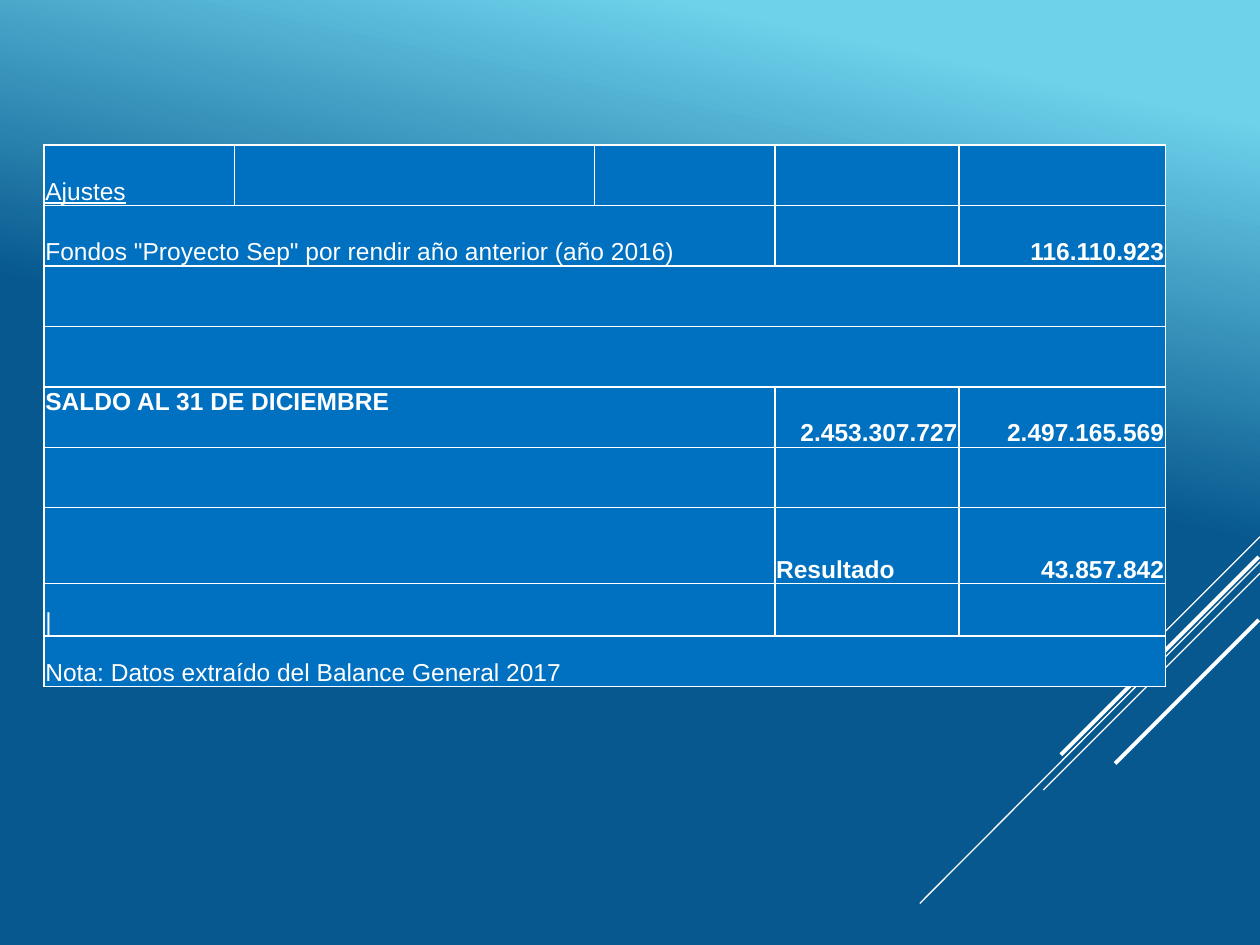
from lxml import etree
from pptx import Presentation
from pptx.dml.color import RGBColor
from pptx.enum import shapes, text
from pptx.oxml import parse_xml
from pptx.oxml.ns import nsdecls, qn
from pptx.util import Inches, Pt

WHITE, CELL_BLUE = "FFFFFF", "0070C0"
LEFT, RIGHT = text.PP_ALIGN.LEFT, text.PP_ALIGN.RIGHT
TOP, BOTTOM = text.MSO_ANCHOR.TOP, text.MSO_ANCHOR.BOTTOM


def paint(color_format, color):
    color_format.rgb = RGBColor.from_string(color)


def write(cell, words, bold=False, underline=False, align=LEFT, anchor=BOTTOM):
    cell.vertical_anchor = anchor
    paragraph = cell.text_frame.paragraphs[0]
    paragraph.alignment = align
    run = paragraph.add_run()
    run.text = words
    run.font.name = "Arial"
    run.font.size = Pt(14)
    run.font.bold = bold
    run.font.underline = underline
    paint(run.font.color, WHITE)


prs = Presentation()
prs.slide_width, prs.slide_height = Inches(10), Inches(7.5)
slide = prs.slides.add_slide(prs.slide_layouts[6])

# Background: light at the top right, dark below
backdrop = slide.background.fill
backdrop.gradient()
backdrop.gradient_angle = 258
for stop, (position, color) in zip(backdrop.gradient_stops,
                                   [(0.10, "6ED2EB"), (0.45, "06588E")]):
    stop.position = position
    paint(stop.color, color)

# Diagonal rays in the lower right corner
rays = [
    (10, 4.26, 9.17, 5.09, 0.75),
    (10, 4.46, 7.3, 7.17, 0.75),
    (10, 4.55, 8.28, 6.27, 0.75),
    (9.99, 4.42, 8.42, 5.99, 2.25),
    (9.99, 4.92, 8.85, 6.06, 2.25),
]
for *ends, weight in rays:
    ray = slide.shapes.add_connector(shapes.MSO_CONNECTOR.STRAIGHT,
                                     *[Inches(end) for end in ends])
    ray.line.width = Pt(weight)
    paint(ray.line.color, WHITE)
    etree.SubElement(ray._element.spPr, qn("a:effectLst"))

# Balance table
column_widths = [1.51, 2.86, 1.43, 1.46, 1.64]
row_heights = [0.48] * 6 + [0.6, 0.42, 0.4]
balance = slide.shapes.add_table(
    len(row_heights), len(column_widths), Inches(0.35), Inches(1.15),
    Inches(sum(column_widths)), Inches(sum(row_heights))).table
balance.first_row = balance.horz_banding = False
for column, width in zip(balance.columns, column_widths):
    column.width = Inches(width)
for row, height in zip(balance.rows, row_heights):
    row.height = Inches(height)

for cell in balance.iter_cells():
    cell.margin_left = cell.margin_right = cell.margin_top = Inches(0.01)
    cell.margin_bottom = 0
    cell.fill.solid()
    paint(cell.fill.fore_color, CELL_BLUE)
    for place, side in enumerate(["lnL", "lnR", "lnT", "lnB"]):
        cell._tc.tcPr.insert(place, parse_xml(
            f'<a:{side} {nsdecls("a")} w="12700"><a:solidFill>'
            f'<a:srgbClr val="{WHITE}"/></a:solidFill></a:{side}>'))

# Last column joined to the first one, by row
joined_to = {1: 2, 2: 4, 3: 4, 4: 2, 5: 2, 6: 2, 7: 2, 8: 4}
for row, last in joined_to.items():
    balance.cell(row, 0).merge(balance.cell(row, last))

entries = [
    (0, 0, "Ajustes", dict(underline=True)),
    (1, 0, 'Fondos "Proyecto Sep" por rendir año anterior (año 2016)', {}),
    (1, 4, "116.110.923", dict(bold=True, align=RIGHT)),
    (4, 0, "SALDO AL 31 DE DICIEMBRE", dict(bold=True, anchor=TOP)),
    (4, 3, "2.453.307.727", dict(bold=True, align=RIGHT)),
    (4, 4, "2.497.165.569", dict(bold=True, align=RIGHT)),
    (6, 3, "Resultado", dict(bold=True)),
    (6, 4, "43.857.842", dict(bold=True, align=RIGHT)),
    (7, 0, "|", {}),
    (8, 0, "Nota: Datos extraído del Balance General 2017", {}),
]
for row, column, words, style in entries:
    write(balance.cell(row, column), words, **style)

prs.save("out.pptx")
